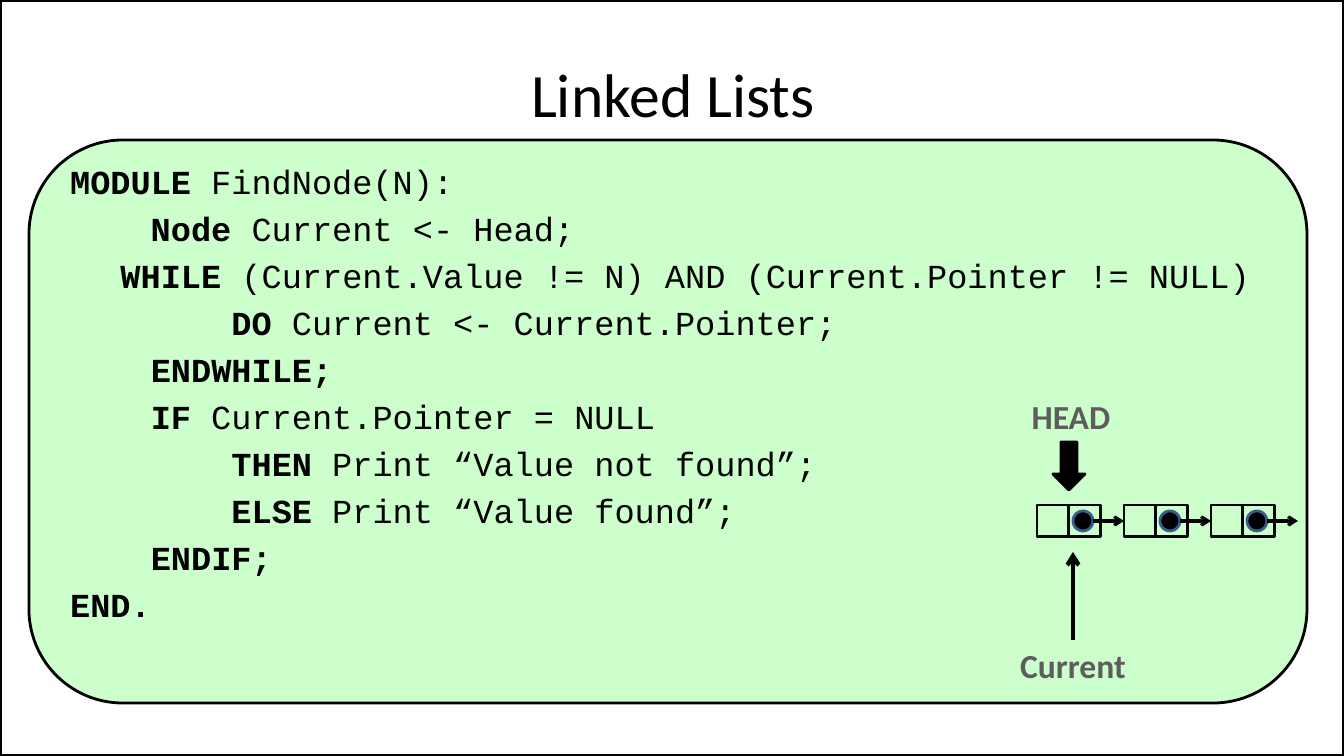
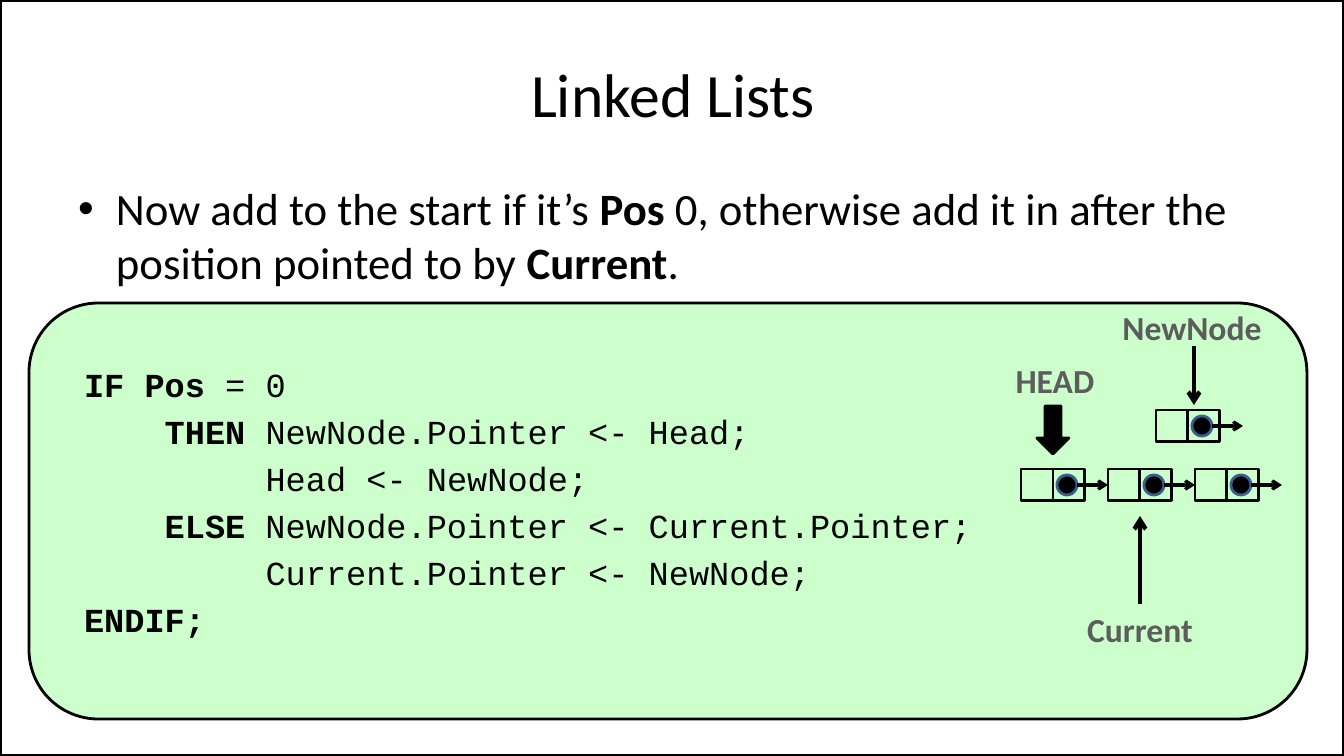
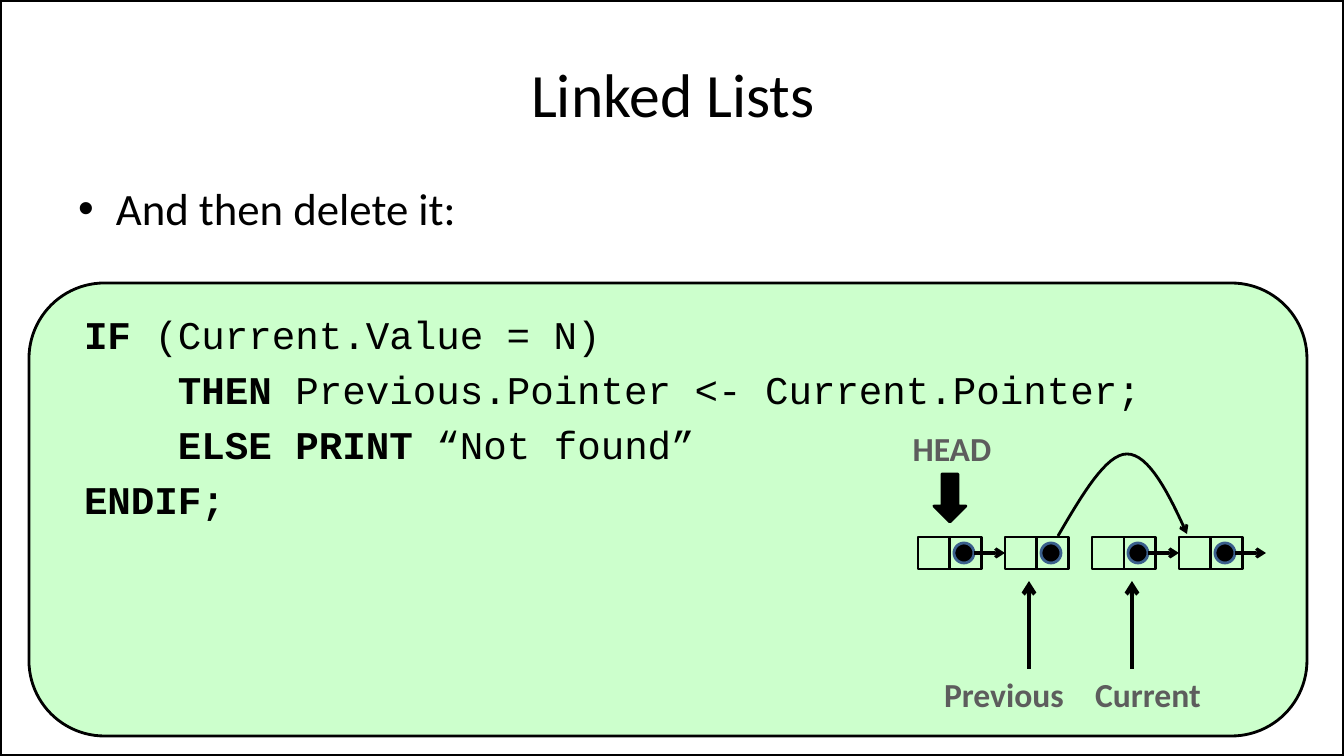
from pptx import Presentation
from pptx.dml.color import RGBColor
from pptx.enum.shapes import MSO_CONNECTOR, MSO_SHAPE
from pptx.enum.text import MSO_ANCHOR, MSO_AUTO_SIZE, PP_ALIGN
from pptx.oxml.ns import qn
from pptx.util import Pt
from lxml import etree

SLIDE_W, SLIDE_H = 1344, 756
EMU_PER_PX = 12192000 / SLIDE_W

RECT, ROUND_RECT = MSO_SHAPE.RECTANGLE, MSO_SHAPE.ROUNDED_RECTANGLE
OVAL, DOWN_ARROW = MSO_SHAPE.OVAL, MSO_SHAPE.DOWN_ARROW
STRAIGHT = MSO_CONNECTOR.STRAIGHT
CENTER, MIDDLE, NO_FIT = PP_ALIGN.CENTER, MSO_ANCHOR.MIDDLE, MSO_AUTO_SIZE.NONE

COLORS = {"ink": "000000", "panel": "CCFFCC", "dot": "3A5F8C", "label": "5D5D5D"}
TEXT_FONT, CODE_FONT = "Calibri", "Courier New"

CELL = 32
NODE_PITCH = 87
BODY = (68, 176, 1210, 499)


def px(n):
    return round(n * EMU_PER_PX)


def rgb(name):
    return RGBColor.from_string(COLORS[name])


def add_arrowhead(line):
    etree.SubElement(line._get_or_add_ln(), qn("a:tailEnd"), type="arrow")


def bezier(p0, p1, p2, p3, steps=16):
    """Points along a cubic curve, without its start."""
    points = []
    for i in range(1, steps + 1):
        t = i / steps
        weights = ((1 - t) ** 3, 3 * t * (1 - t) ** 2, 3 * t * t * (1 - t), t ** 3)
        points.append(tuple(sum(w * p[axis] for w, p in zip(weights, (p0, p1, p2, p3)))
                            for axis in (0, 1)))
    return points


class Deck:
    def __init__(self):
        self.prs = Presentation()
        self.prs.slide_width, self.prs.slide_height = px(SLIDE_W), px(SLIDE_H)
        self.s = None

    def slide(self, title):
        self.s = self.prs.slides.add_slide(self.prs.slide_layouts[1])
        sp = self.s.shapes.title
        self.place(sp, 68, 30, 1210, 126)
        tf = sp.text_frame
        tf.text = title
        tf.vertical_anchor = MIDDLE
        tf.paragraphs[0].alignment = CENTER
        self.style(tf.paragraphs[0].runs[0], TEXT_FONT, 44)

    def frame(self):
        """Move the slide border to the master, behind its placeholders."""
        sp = self.shape(RECT, 0, 0, SLIDE_W, SLIDE_H, width=3)
        sp.element.nvSpPr.cNvPr.set("id", "99")
        self.prs.slide_master.shapes.element.insert(2, sp.element)

    def place(self, sp, x, y, w, h):
        sp.left, sp.top, sp.width, sp.height = px(x), px(y), px(w), px(h)

    def style(self, r, font, size, bold=False, color="ink"):
        r.font.name, r.font.size, r.font.bold = font, Pt(size), bold
        r.font.color.rgb = rgb(color)

    def outline(self, sp, color, width):
        sp.line.color.rgb = rgb(color)
        sp.line.width = Pt(width)

    def shape(self, kind, x, y, w, h, fill=None, line="ink", width=2):
        sp = self.s.shapes.add_shape(kind, px(x), px(y), px(w), px(h))
        sp.shadow.inherit = False
        if fill:
            sp.fill.solid()
            sp.fill.fore_color.rgb = rgb(fill)
        else:
            sp.fill.background()
        self.outline(sp, line, width)
        return sp

    def panel(self, y, h):
        sp = self.shape(ROUND_RECT, 29, y, 1278, h, "panel")
        self.s.shapes.element.insert(2, sp.element)

    def rich(self, p, text, font, size):
        """Fill a paragraph; parts between ** marks are bold."""
        for i, part in enumerate(text.split("**")):
            if part:
                r = p.add_run()
                r.text = part
                self.style(r, font, size, bold=i % 2 == 1)

    def body(self, box, code, size, bullet=None):
        sp = self.s.placeholders[1]
        self.place(sp, *box)
        tf = sp.text_frame
        tf.auto_size = NO_FIT
        p = tf.paragraphs[0]
        if bullet:
            self.rich(p, bullet, TEXT_FONT, 32)
        for i, text in enumerate(code):
            if i or bullet:
                p = tf.add_paragraph()
            pPr = p._p.get_or_add_pPr()
            pPr.set("marL", str(px(6)))
            pPr.set("indent", "0")
            etree.SubElement(pPr, qn("a:buNone"))
            if bullet and i == 0:
                p.space_before = Pt(54)
            self.rich(p, text, CODE_FONT, size)

    def label(self, text, cx, y):
        sp = self.s.shapes.add_textbox(px(cx - 90), px(y), px(180), px(50))
        tf = sp.text_frame
        tf.word_wrap = True
        tf.text = text
        p = tf.paragraphs[0]
        p.alignment = CENTER
        self.style(p.runs[0], TEXT_FONT, 24, True, "label")

    def arrow(self, x1, y1, x2, y2, width=3, target=None):
        c = self.s.shapes.add_connector(STRAIGHT, px(x1), px(y1), px(x2), px(y2))
        if target is not None:
            c.end_connect(target, 1)
        self.outline(c, "ink", width)
        add_arrowhead(c.line)
        etree.SubElement(c.element.spPr, qn("a:effectLst"))

    def chain(self, x, y, count, unlinked=()):
        """Row of two-cell nodes, each with an arrow unless its index is unlinked."""
        xs = [x + i * NODE_PITCH for i in range(count)]
        cells = []
        for nx in xs:
            cells.append(self.shape(RECT, nx, y, CELL, CELL))
            self.shape(RECT, nx + CELL, y, CELL, CELL)
            self.shape(OVAL, nx + 36, y + 6, 20, 20, "ink", "dot")
        for i, nx in enumerate(xs):
            if i not in unlinked:
                target = cells[i + 1] if i + 1 < count else None
                self.arrow(nx + 56, y + 16, nx + NODE_PITCH, y + 16, 2.25, target)

    def head(self, x, y):
        """HEAD mark over the chain that starts at x, y."""
        self.label("HEAD", x + 34, y - 114)
        self.shape(DOWN_ARROW, x + 16, y - 63, 32, 48, "ink")

    def pointer(self, text, x, chain_y, label_x=None):
        """Named arrow pointing up at a chain."""
        self.label(text, label_x or x, chain_y + 135)
        self.arrow(x, chain_y + 135, x, chain_y + 47)

    def bypass(self, start, *curves):
        """Curved arrow through cubic segments."""
        builder = self.s.shapes.build_freeform(px(start[0]), px(start[1]))
        for curve in curves:
            points = bezier(start, *curve)
            builder.add_line_segments([(px(x), px(y)) for x, y in points], close=False)
            start = curve[-1]
        sp = builder.convert_to_shape()
        sp.shadow.inherit = False
        sp.fill.background()
        self.outline(sp, "ink", 2)
        add_arrowhead(sp.line)


def main():
    d = Deck()

    d.slide("Linked Lists")
    d.frame()
    d.panel(140, 563)
    d.body((54, 156, 1277, 499), [
        "**MODULE **FindNode(N):",
        "    **Node **Current <- Head;",
        "**\tWHILE** (Current.Value != N) AND (Current.Pointer != NULL)",
        "**        DO **Current <- Current.Pointer;",
        "**    ENDWHILE;**",
        "**    IF **Current.Pointer = NULL",
        "**        THEN** Print “Value not found”;",
        "**        ELSE **Print “Value found”;",
        "**    ENDIF;**",
        "**END.**",
    ], 24)
    d.chain(1037, 505, 3)
    d.head(1037, 505)
    d.pointer("Current", 1073, 505)

    d.slide("Linked Lists")
    d.panel(303, 416)
    d.body(BODY, [
        "**IF Pos** = 0",
        "**    THEN **NewNode.Pointer <- Head;",
        "         Head <- NewNode;",
        "    **ELSE **NewNode.Pointer <- Current.Pointer;",
        "         Current.Pointer <- NewNode;",
        "**ENDIF;**",
    ], 24, "Now add to the start if it’s **Pos** 0, otherwise add it in after "
           "the position pointed to by **Current**.")
    d.chain(1021, 469, 3)
    d.head(1021, 469)
    d.pointer("Current", 1140, 469)
    d.chain(1156, 410, 1)
    d.label("NewNode", 1192, 302)
    d.arrow(1194, 346, 1194, 405)

    d.slide("Linked Lists")
    d.panel(283, 453)
    d.body(BODY, [
        "**IF **(Current.Value = N)",
        "**    THEN **Previous.Pointer <- Current.Pointer;",
        "**    ELSE PRINT** “Not found”",
        "**ENDIF;**",
    ], 28, "And then delete it:")
    d.chain(918, 537, 4, unlinked=(1,))
    d.head(918, 537)
    d.pointer("Previous", 1029, 534, 1004)
    d.pointer("Current", 1132, 534, 1148)
    d.bypass((1058, 536),
             ((1082, 495), (1106, 454), (1127, 454)),
             ((1149, 454), (1169, 494), (1187, 534)))

    d.prs.save("out.pptx")


if __name__ == "__main__":
    main()
